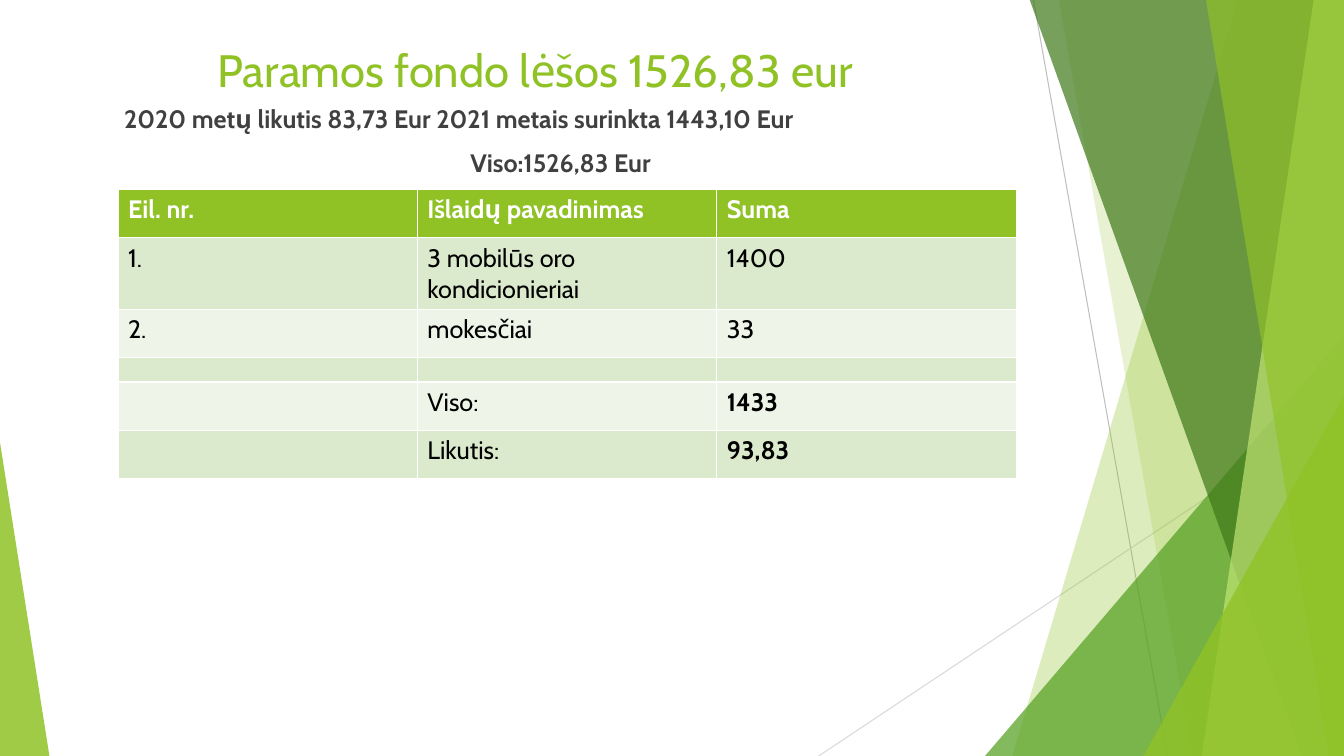
from dataclasses import dataclass

from lxml.etree import SubElement
from pptx import Presentation
from pptx.dml.color import RGBColor
from pptx.enum.shapes import MSO_CONNECTOR, MSO_SHAPE
from pptx.enum.text import MSO_ANCHOR, MSO_AUTO_SIZE, PP_ALIGN
from pptx.oxml.ns import qn
from pptx.util import Pt

PX = 9144  # one hundredth of an inch
WIDTH, HEIGHT = 1333, 750
FONT = "Cabin"
COLOURS = {
    "lime": "90C226", "green": "54A021", "forest": "3F7819", "pale": "C0E474",
    "text": "404040", "black": "000000", "white": "FFFFFF",
    "grey": "BFBFBF", "light grey": "D9D9D9",
    "band dark": "DBE9CD", "band light": "EEF4E8",
}


@dataclass
class Line:
    start: tuple[int, int]
    end: tuple[int, int]
    colour: str


@dataclass
class Shard:
    """Panel from the top edge to the bottom edge, reaching the right edge."""
    top: int
    bottom: int
    colour: str
    opacity: int


@dataclass
class Triangle:
    left: int
    top: int
    width: int
    apex: int
    colour: str
    opacity: int


LINES = [
    Line((1025, 0), (1158, HEIGHT), "grey"),
    Line((WIDTH, 403), (812, HEIGHT), "light grey"),
]
FACETS = [
    Shard(1228, 1004, "lime", 30),
    Shard(1050, 1183, "lime", 20),
    Triangle(977, 333, 356, 1, "green", 72),
    Shard(1021, 1291, "forest", 70),
    Shard(1303, 1192, "pale", 70),
    Shard(1196, 1318, "lime", 65),
    Triangle(1134, 393, 199, 1, "lime", 80),
    Triangle(0, 439, 49, 0, "lime", 85),
]
TITLE = "Paramos fondo lėšos 1526,83 eur"
SUMMARY = [
    ("2020 metų likutis 83,73 Eur 2021 metais surinkta 1443,10 Eur", PP_ALIGN.LEFT, 50),
    ("Viso:1526,83 Eur", PP_ALIGN.CENTER, 0),
]
ROWS = [
    ("Eil. nr.", "Išlaidų pavadinimas", "Suma"),
    ("1.", "3 mobilūs oro kondicionieriai", "1400"),
    ("2.", "mokesčiai", "33"),
    ("", "", ""),
    ("", "Viso:", "1433"),
    ("", "Likutis:", "93,83"),
]
ROW_HEIGHTS = [48, 70, 48, 24, 48, 48]
BOLD_CELLS = {"1433", "93,83"}


def rgb(name: str) -> RGBColor:
    return RGBColor.from_string(COLOURS[name])


def place(shape, left: int, top: int, width: int, height: int) -> None:
    box = {"left": left, "top": top, "width": width, "height": height}
    for name, value in box.items():
        setattr(shape, name, value * PX)


def write(para, text: str, size: float, colour: str, bold: bool = False) -> None:
    span = para.add_run()
    span.text = text
    for name, value in {"name": FONT, "size": Pt(size), "bold": bold}.items():
        setattr(span.font, name, value)
    span.font.color.rgb = rgb(colour)


def draw_line(page, line: Line) -> None:
    ends = [value * PX for value in (*line.start, *line.end)]
    connector = page.shapes.add_connector(MSO_CONNECTOR.STRAIGHT, *ends)
    connector.line.color.rgb = rgb(line.colour)
    connector.line.width = Pt(0.75)
    SubElement(connector._element.spPr, qn("a:effectLst"))


def draw_facet(page, facet: Shard | Triangle) -> None:
    if isinstance(facet, Shard):
        builder = page.shapes.build_freeform(facet.top, -1, scale=PX)
        builder.add_line_segments([(WIDTH, -1), (WIDTH, HEIGHT), (facet.bottom, HEIGHT)])
        shape = builder.convert_to_shape()
    else:
        shape = page.shapes.add_shape(MSO_SHAPE.ISOSCELES_TRIANGLE, 0, 0, PX, PX)
        place(shape, facet.left, facet.top, facet.width, HEIGHT - facet.top)
        shape.adjustments[0] = facet.apex
    shape.shadow.inherit = False
    shape.line.fill.background()
    shape.fill.solid()
    shape.fill.fore_color.rgb = rgb(facet.colour)
    colour = shape._element.spPr.find(f".//{qn('a:srgbClr')}")
    SubElement(colour, qn("a:alpha"), val=str(facet.opacity * 1000))


def fill_placeholder(page, shape, anchor: MSO_ANCHOR):
    """Bring a placeholder in front of the facets and return its text frame."""
    page.shapes._spTree.append(shape._element)
    frame = shape.text_frame
    formats = {"word_wrap": True, "auto_size": MSO_AUTO_SIZE.NONE, "vertical_anchor": anchor}
    for name, value in formats.items():
        setattr(frame, name, value)
    return frame


def add_title(page) -> None:
    title = page.shapes.title
    place(title, 63, 39, 936, 60)
    para = fill_placeholder(page, title, MSO_ANCHOR.MIDDLE).paragraphs[0]
    para.alignment = PP_ALIGN.CENTER
    write(para, TITLE, 32.4, "lime")


def add_summary(page) -> None:
    body = page.placeholders[1]
    place(body, 63, 97, 986, 481)
    frame = fill_placeholder(page, body, MSO_ANCHOR.TOP)
    for index, (text, alignment, indent) in enumerate(SUMMARY):
        para = frame.add_paragraph() if index else frame.paragraphs[0]
        para.alignment = alignment
        para.space_before = Pt(10)
        properties = para._p.get_or_add_pPr()
        properties.set("marL", str(indent * PX))
        properties.set("indent", "0")
        SubElement(properties, qn("a:buNone"))
        write(para, text, 18, "text", bold=True)


def add_expenses(page) -> None:
    columns = len(ROWS[0])
    frame = page.shapes.add_table(len(ROWS), columns, PX, PX, PX, PX)
    place(frame, 117, 188, 297 * columns, sum(ROW_HEIGHTS))
    table = frame.table
    for column in table.columns:
        column.width = 297 * PX
    for row_index, (texts, height) in enumerate(zip(ROWS, ROW_HEIGHTS)):
        table.rows[row_index].height = height * PX
        header = row_index == 0
        band = "lime" if header else "band dark" if row_index % 2 else "band light"
        for column_index, text in enumerate(texts):
            cell = table.cell(row_index, column_index)
            cell.fill.solid()
            cell.fill.fore_color.rgb = rgb(band)
            para = cell.text_frame.paragraphs[0]
            if text:
                write(para, text, 18, "white" if header else "black",
                      bold=header or text in BOLD_CELLS)
            else:
                # Small end mark keeps the empty row low
                SubElement(para._p, qn("a:endParaRPr"), sz="800")


def main() -> None:
    deck = Presentation()
    deck.slide_width, deck.slide_height = WIDTH * PX, HEIGHT * PX
    page = deck.slides.add_slide(deck.slide_layouts[1])

    # Background decoration
    for line in LINES:
        draw_line(page, line)
    for facet in FACETS:
        draw_facet(page, facet)

    # Content
    add_title(page)
    add_summary(page)
    add_expenses(page)
    deck.save("out.pptx")


if __name__ == "__main__":
    main()
